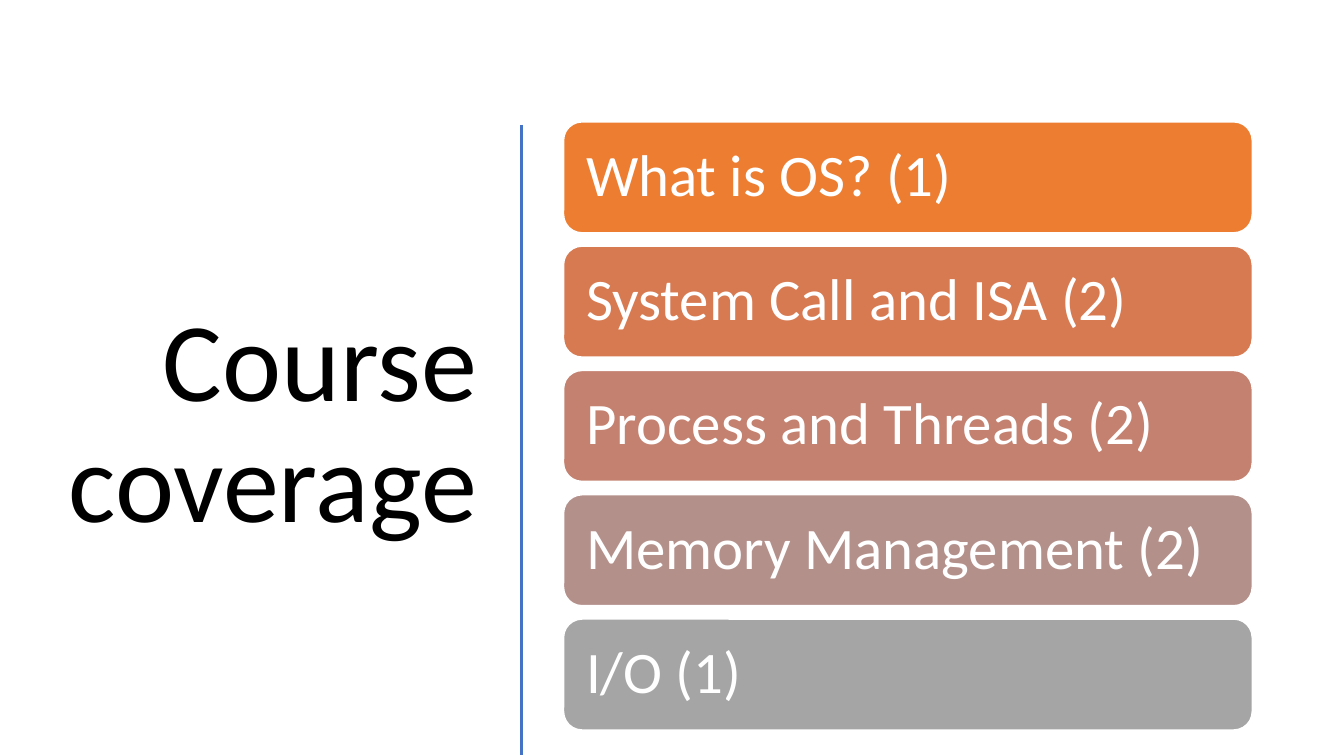
import pptx
import pptx.util
import pptx.dml.color
import pptx.enum.shapes
import pptx.enum.text
from dataclasses import dataclass
from pptx.util import Inches


@dataclass(frozen=True)
class Theme:
    font: str = "Calibri"
    title_size: int = 80
    topic_size: int = 42
    ink: str = "000000"
    white: str = "FFFFFF"
    rule: str = "4472C4"


THEME = Theme()

TOPICS = [
    ("What is OS? (1)", "ED7D31"),
    ("System Call and ISA (2)", "D87A51"),
    ("Process and Threads (2)", "C48170"),
    ("Memory Management (2)", "B4908B"),
    ("I/O (1)", "A5A5A5"),
]
TOPIC_TOP, TOPIC_STEP = 1.21, 1.233


def rgb(color):
    return pptx.dml.color.RGBColor.from_string(color)


def write_text(sp, text, size, color, align, inset_x, inset_y):
    tf = sp.text_frame
    tf.word_wrap = True
    tf.vertical_anchor = pptx.enum.text.MSO_ANCHOR.MIDDLE
    tf.margin_left = tf.margin_right = Inches(inset_x)
    tf.margin_top = tf.margin_bottom = Inches(inset_y)
    tf.text = text
    p = tf.paragraphs[0]
    p.alignment = align
    p.line_spacing = 0.9
    font = p.runs[0].font
    font.name = THEME.font
    font.size = pptx.util.Pt(size)
    font.color.rgb = rgb(color)


def add_title(s, text):
    sp = s.shapes.add_textbox(Inches(0.52), Inches(1.17), Inches(4.31), Inches(6.11))
    write_text(sp, text, THEME.title_size, THEME.ink,
               pptx.enum.text.PP_ALIGN.RIGHT, 0.1, 0.05)


def add_divider(s, x, top, bottom):
    line = s.shapes.add_connector(pptx.enum.shapes.MSO_CONNECTOR.STRAIGHT,
                                  Inches(x), Inches(top), Inches(x), Inches(bottom))
    line.line.color.rgb = rgb(THEME.rule)
    line.line.width = pptx.util.Pt(2)
    line._element.spPr.append(
        pptx.oxml.parse_xml('<a:effectLst xmlns:a='
                            '"http://schemas.openxmlformats.org/drawingml/2006/main"/>'))


def add_topic(s, top, text, fill):
    sp = s.shapes.add_shape(pptx.enum.shapes.MSO_SHAPE.ROUNDED_RECTANGLE,
                            Inches(5.59), Inches(top), Inches(6.83), Inches(1.1))
    sp.shadow.inherit = False
    sp.fill.solid()
    sp.fill.fore_color.rgb = rgb(fill)
    sp.line.color.rgb = rgb(THEME.white)
    sp.line.width = pptx.util.Pt(1)
    write_text(sp, text, THEME.topic_size, THEME.white,
               pptx.enum.text.PP_ALIGN.LEFT, 0.17, 0.17)


def main():
    prs = pptx.Presentation()
    prs.slide_width, prs.slide_height = Inches(13.33), Inches(7.5)
    s = prs.slides.add_slide(prs.slide_layouts[6])

    # Title and divider
    add_title(s, "Course coverage")
    add_divider(s, 5.17, 1.24, 7.49)

    # Topic bars
    for i, (text, fill) in enumerate(TOPICS):
        add_topic(s, TOPIC_TOP + i * TOPIC_STEP, text, fill)

    prs.save("out.pptx")


if __name__ == "__main__":
    main()
